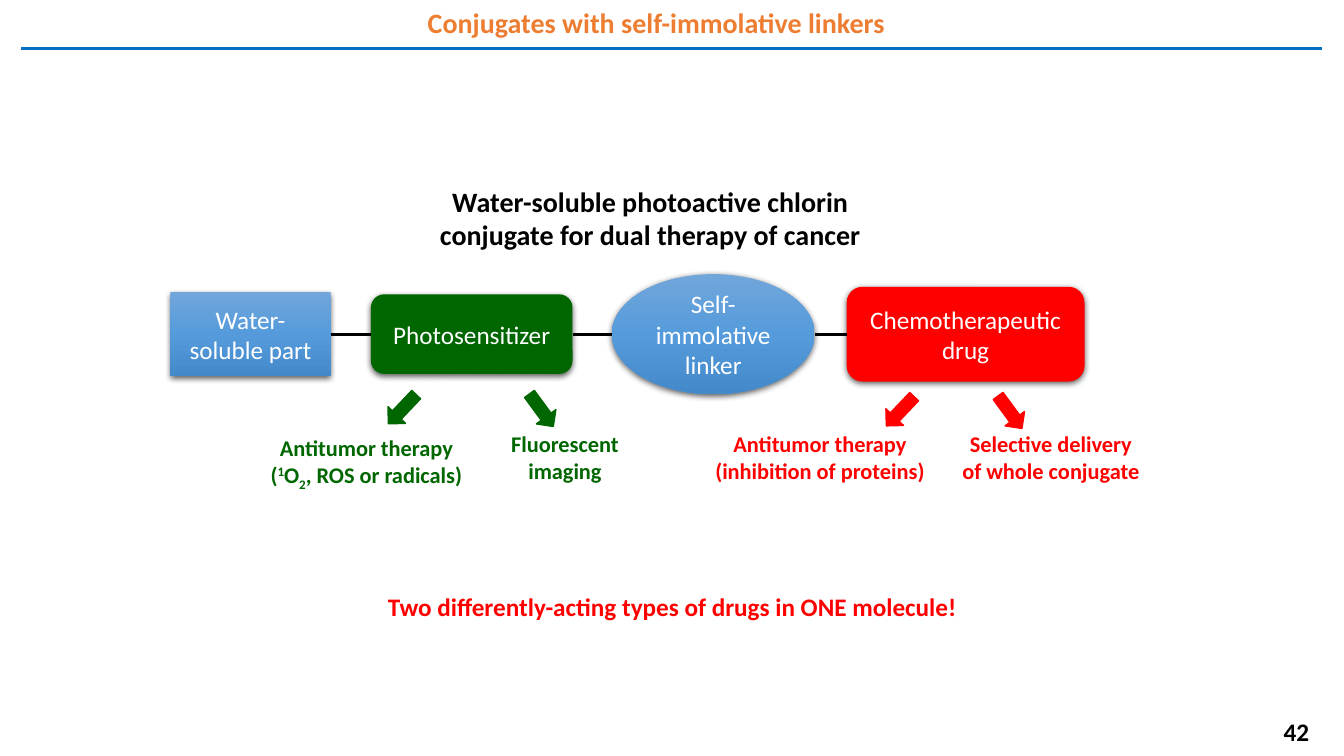
from dataclasses import dataclass
from itertools import pairwise

from lxml.etree import SubElement
from pptx import Presentation
from pptx.dml.color import RGBColor
from pptx.enum.shapes import MSO_CONNECTOR as Link, MSO_SHAPE as Form
from pptx.enum.text import MSO_ANCHOR as Anchor, PP_ALIGN as Align
from pptx.oxml.ns import qn
from pptx.util import Inches, Pt

WIDTH, HEIGHT = Inches(13.333), Inches(7.5)
CHAIN_Y = 44.2


@dataclass(frozen=True)
class Theme:
    """Colours, type sizes and strokes of the slide."""
    font: str = "Calibri"
    white: str = "FFFFFF"
    black: str = "000000"
    orange: str = "ED7D31"
    rule: str = "0070C0"
    green: str = "006600"
    red: str = "FF0000"
    blues: tuple = ("71A6DB", "559BDB", "448ACA")
    heading: int = 20
    body: int = 18
    label: int = 16
    stroke: float = 2.25


THEME = Theme()


def across(share):
    """Turn a percentage of the slide width into a length."""
    return round(WIDTH * share / 100)


def down(share):
    """Turn a percentage of the slide height into a length."""
    return round(HEIGHT * share / 100)


def frame(left, top, width, height):
    """Turn four percentages into a position and a size."""
    return across(left), down(top), across(width), down(height)


def write(text_frame, lines, size, colour, bold=True, align=Align.CENTER):
    """Write lines made of plain strings or of (text, baseline) runs."""
    for number, line in enumerate(lines):
        paragraph = text_frame.add_paragraph() if number else text_frame.paragraphs[0]
        paragraph.alignment = align
        for words, baseline in [(line, 0)] if isinstance(line, str) else line:
            run = paragraph.add_run()
            run.text = words
            run.font.name, run.font.size, run.font.bold = THEME.font, Pt(size), bold
            run.font.color.rgb = RGBColor.from_string(colour)
            if baseline:
                run.font._element.set("baseline", str(baseline * 1000))


def add_label(slide, place, lines, size, colour, wrap=False, align=Align.CENTER):
    """Add a bold text box."""
    text_frame = slide.shapes.add_textbox(*frame(*place)).text_frame
    text_frame.word_wrap = wrap
    write(text_frame, lines, size, colour, align=align)


def add_heading(slide, words):
    """Move the title placeholder to the top edge and fill it."""
    heading = slide.shapes.title
    heading.left, heading.top, heading.width, heading.height = frame(11.33, 0, 75, 5.47)
    heading.text_frame.vertical_anchor = Anchor.TOP
    write(heading.text_frame, [words], THEME.heading, THEME.orange)


def paint_blues(fill):
    """Fill with the three-stop vertical blue gradient."""
    fill.gradient()
    fill.gradient_angle = 270
    stops = fill._xPr.find(f".//{qn('a:gsLst')}")
    for stop in list(stops):
        stops.remove(stop)
    for number, colour in enumerate(THEME.blues):
        stop = SubElement(stops, qn("a:gs"), pos=str(number * 50000))
        SubElement(stop, qn("a:srgbClr"), val=colour)


def cast_shadow(part):
    """Give a shape a soft shadow straight below it."""
    part.shadow.inherit = False
    effects = part._element.spPr.find(qn("a:effectLst"))
    shadow = SubElement(effects, qn("a:outerShdw"), blurRad=str(Pt(4.5)),
                        dist=str(Pt(1.5)), dir="5400000", rotWithShape="0")
    tint = SubElement(shadow, qn("a:srgbClr"), val=THEME.black)
    SubElement(tint, qn("a:alpha"), val="63000")


def add_part(slide, form, left, width, height, colour, words):
    """Add one part of the conjugate, centred on the chain."""
    place = frame(left, CHAIN_Y - height / 2, width, height)
    part = slide.shapes.add_shape(form, *place)
    if colour:
        part.fill.solid()
        part.fill.fore_color.rgb = RGBColor.from_string(colour)
    else:
        paint_blues(part.fill)
    part.line.fill.background()
    cast_shadow(part)
    part.text_frame.word_wrap = True
    part.text_frame.vertical_anchor = Anchor.MIDDLE
    write(part.text_frame, [words], THEME.body, THEME.white, bold=False)
    return part


def add_line(slide, start, end, y, colour):
    """Add a level line between two horizontal positions."""
    line = slide.shapes.add_connector(Link.STRAIGHT, start, y, end, y)
    line.line.color.rgb = RGBColor.from_string(colour)
    line.line.width = Pt(THEME.stroke)
    SubElement(line._element.spPr, qn("a:effectLst"))
    return line


def add_bond(slide, before, after):
    """Link two neighbouring parts, joined where they have side middles."""
    bond = add_line(slide, before.left + before.width, after.left,
                    down(CHAIN_Y), THEME.black)
    if before.auto_shape_type != Form.OVAL:
        bond.begin_connect(before, 3)
    if after.auto_shape_type != Form.OVAL:
        bond.end_connect(after, 1)


def add_arrow(slide, centre_x, centre_y, angle, colour):
    """Add a block arrow turned about its centre."""
    width, height = 3, 3.2
    place = frame(centre_x - width / 2, centre_y - height / 2, width, height)
    arrow = slide.shapes.add_shape(Form.RIGHT_ARROW, *place)
    arrow.rotation = angle
    arrow.shadow.inherit = False
    arrow.fill.solid()
    arrow.fill.fore_color.rgb = arrow.line.color.rgb = RGBColor.from_string(colour)
    arrow.line.width = Pt(1)


def main():
    """Build and save the slide."""
    deck = Presentation()
    deck.slide_width, deck.slide_height = WIDTH, HEIGHT
    slide = deck.slides.add_slide(deck.slide_layouts[5])

    add_heading(slide, "Conjugates with self-immolative linkers")
    add_line(slide, across(1.58), across(98.4), down(6.4), THEME.rule)
    add_label(slide, (29.63, 23.73, 37.5, 10.27),
              ["Water-soluble photoactive chlorin conjugate for dual therapy of cancer"],
              THEME.heading, THEME.black, wrap=True)

    chain = [add_part(slide, *part) for part in (
        (Form.RECTANGLE, 12.68, 11.93, 11.07, None, "Water-soluble part"),
        (Form.ROUNDED_RECTANGLE, 27.6, 15, 10.53, THEME.green, "Photosensitizer"),
        (Form.OVAL, 45.53, 15.08, 15.87, None, "Self-immolative linker"),
        (Form.ROUNDED_RECTANGLE, 63, 17.7, 12.53, THEME.red, "Chemotherapeutic drug"),
    )]
    for before, after in pairwise(chain):
        add_bond(slide, before, after)

    leftward, rightward = 133.5, 53.8
    oxygen = [("(", 0), ("1", 30), ("O", 0), ("2", -25), (", ROS or radicals)", 0)]
    effects = (
        (THEME.green, (29.93, 54.13, leftward), (19.2, 56.8, 16.13),
         ["Antitumor therapy", oxygen]),
        (THEME.green, (40.28, 54.27, rightward), (36.15, 56.27, 11.78),
         ["Fluorescent", "imaging"]),
        (THEME.red, (66.98, 54.4, leftward), (52.35, 56.27, 17.33),
         ["Antitumor therapy", "(inhibition of proteins)"]),
        (THEME.red, (75.15, 54.53, rightward), (68.33, 56.27, 19.73),
         ["Selective delivery", "of whole conjugate"]),
    )
    for colour, arrow, place, lines in effects:
        add_arrow(slide, *arrow, colour)
        add_label(slide, (*place, 8.53), lines, THEME.label, colour)

    add_label(slide, (28.13, 77.6, 44.25, 5.33),
              ["Two differently-acting types of drugs in ONE molecule!"],
              THEME.body, THEME.red, align=Align.LEFT)
    add_label(slide, (93.98, 94.13, 4.95, 5.33), ["42"], THEME.body, THEME.black)
    deck.save("out.pptx")


if __name__ == "__main__":
    main()
